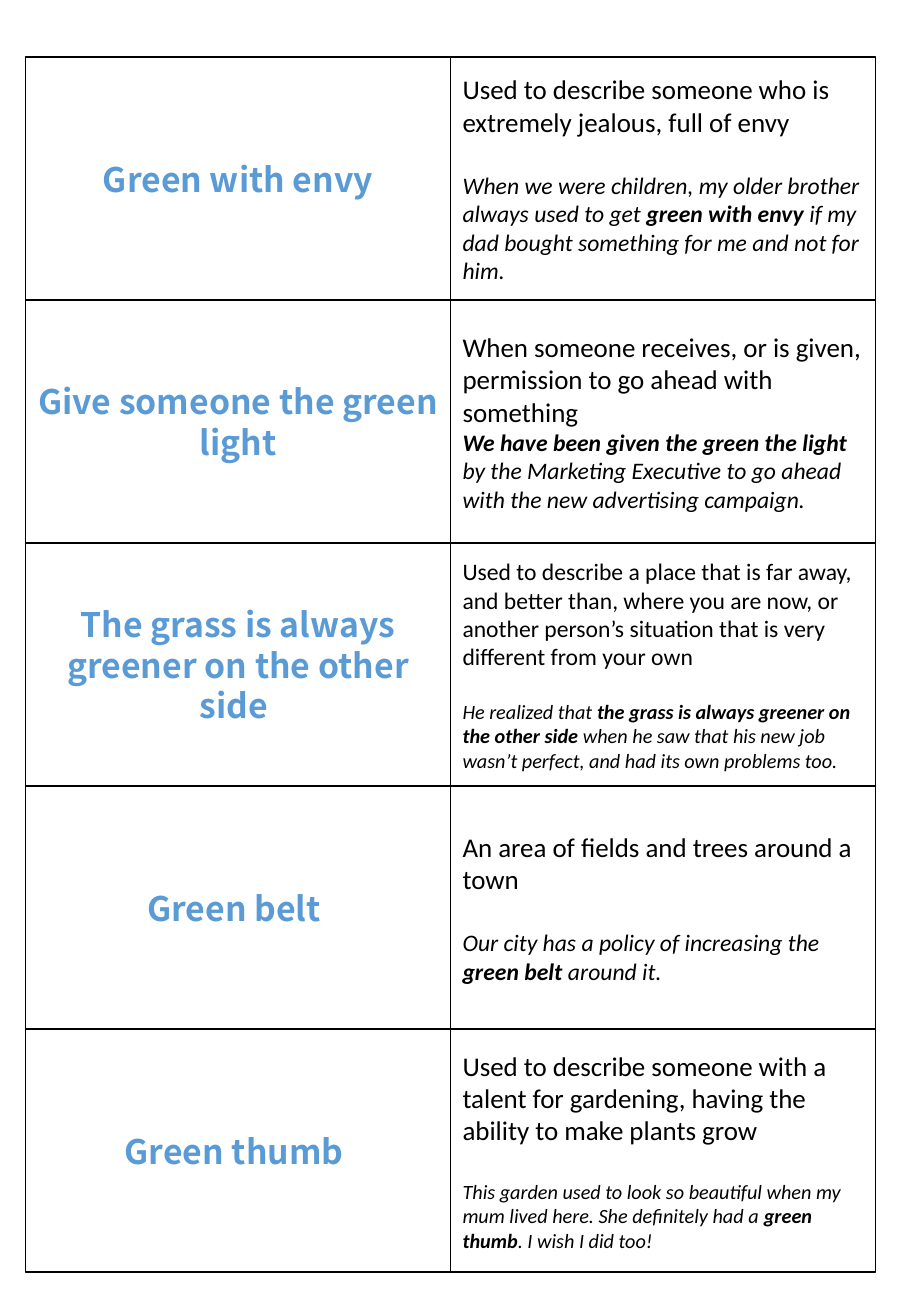
from dataclasses import dataclass

from pptx import Presentation
from pptx.dml.color import RGBColor
from pptx.enum.shapes import MSO_SHAPE
from pptx.enum.text import MSO_ANCHOR, PP_ALIGN
from pptx.util import Inches, Pt

RECT = MSO_SHAPE.RECTANGLE
MIDDLE = MSO_ANCHOR.MIDDLE
LEFT, CENTER = PP_ALIGN.LEFT, PP_ALIGN.CENTER


@dataclass(frozen=True)
class Theme:
    paper: RGBColor = RGBColor(255, 255, 255)
    ink: RGBColor = RGBColor(0, 0, 0)
    blue: RGBColor = RGBColor(91, 155, 213)
    head: str = "Noto Sans CJK KR"
    body: str = "Calibri"
    title: int = 20
    large: int = 16
    mid: int = 14
    small: int = 12
    rule: int = 1
    line: float = 1.22


THEME = Theme()
BIG, MID, LOW = THEME.large, THEME.mid, THEME.small

CARDS = [
    ("Green with envy", BIG,
     "Used to describe someone who is extremely jealous, full of envy",
     True, MID,
     "When we were children, my older brother always used to get *green with envy*"
     " if my dad bought something for me and not for him."),
    ("Give someone the green light", BIG,
     "When someone receives, or is given, permission to go ahead with something",
     False, MID,
     "*We have been given the green the light*"
     " by the Marketing Executive to go ahead with the new advertising campaign."),
    ("The grass is always greener on the other side ", MID,
     "Used to describe a place that is far away, and better than, where you are now, "
     "or another person’s situation that is very different from your own",
     True, LOW,
     "He realized that *the grass is always greener on the other side*"
     " when he saw that his new job wasn’t perfect, and had its own problems too."),
    ("Green belt ", BIG,
     "An area of fields and trees around a town",
     True, MID,
     "Our city has a policy of increasing the *green belt* around it."),
    ("Green thumb ", BIG,
     "Used to describe someone with a talent for gardening, "
     "having the ability to make plants grow",
     True, LOW,
     "This garden used to look so beautiful when my mum lived here. "
     "She definitely had a *green thumb*. I wish I did too!"),
]


class Sheet:
    left, top, wide, high = 0.21, 0.47, 3.5, 2

    def __init__(self, slide, theme):
        self.slide = slide
        self.theme = theme

    def cell(self, col, row):
        box = self.slide.shapes.add_shape(
            RECT,
            Inches(self.left + col * self.wide),
            Inches(self.top + row * self.high),
            Inches(self.wide),
            Inches(self.high),
        )
        box.shadow.inherit = False
        box.fill.solid()
        box.fill.fore_color.rgb = self.theme.paper
        box.line.color.rgb = self.theme.ink
        box.line.width = Pt(self.theme.rule)
        frame = box.text_frame
        frame.word_wrap = True
        frame.vertical_anchor = MIDDLE
        return frame

    def run(self, para, text, color, **form):
        run = para.add_run()
        run.text = text
        run.font.color.rgb = color
        for name, value in form.items():
            setattr(run.font, name, value)

    def term(self, row, text):
        para = self.cell(0, row).paragraphs[0]
        para.alignment = CENTER
        self.run(para, text, self.theme.blue, name=self.theme.head,
                 size=Pt(self.theme.title), bold=True)

    def sense(self, row, size, text, gap, low, quote):
        theme = self.theme
        frame = self.cell(1, row)
        first = frame.paragraphs[0]
        first.alignment = LEFT
        self.run(first, text, theme.ink, name=theme.body, size=Pt(size))
        para = frame.add_paragraph()
        para.alignment = LEFT
        if gap:
            para.space_before = Pt(round(size * theme.line, 1))
        for turn, part in enumerate(quote.split("*")):
            if part:
                self.run(para, part, theme.ink, name=theme.body, size=Pt(low),
                         italic=True, bold=turn % 2 == 1)


def main():
    deck = Presentation()
    deck.slide_width = Inches(7.5)
    deck.slide_height = Inches(10.83)
    sheet = Sheet(deck.slides.add_slide(deck.slide_layouts[6]), THEME)
    for row, (term, *sense) in enumerate(CARDS):
        sheet.term(row, term)
        sheet.sense(row, *sense)
    deck.save("out.pptx")


if __name__ == "__main__":
    main()
